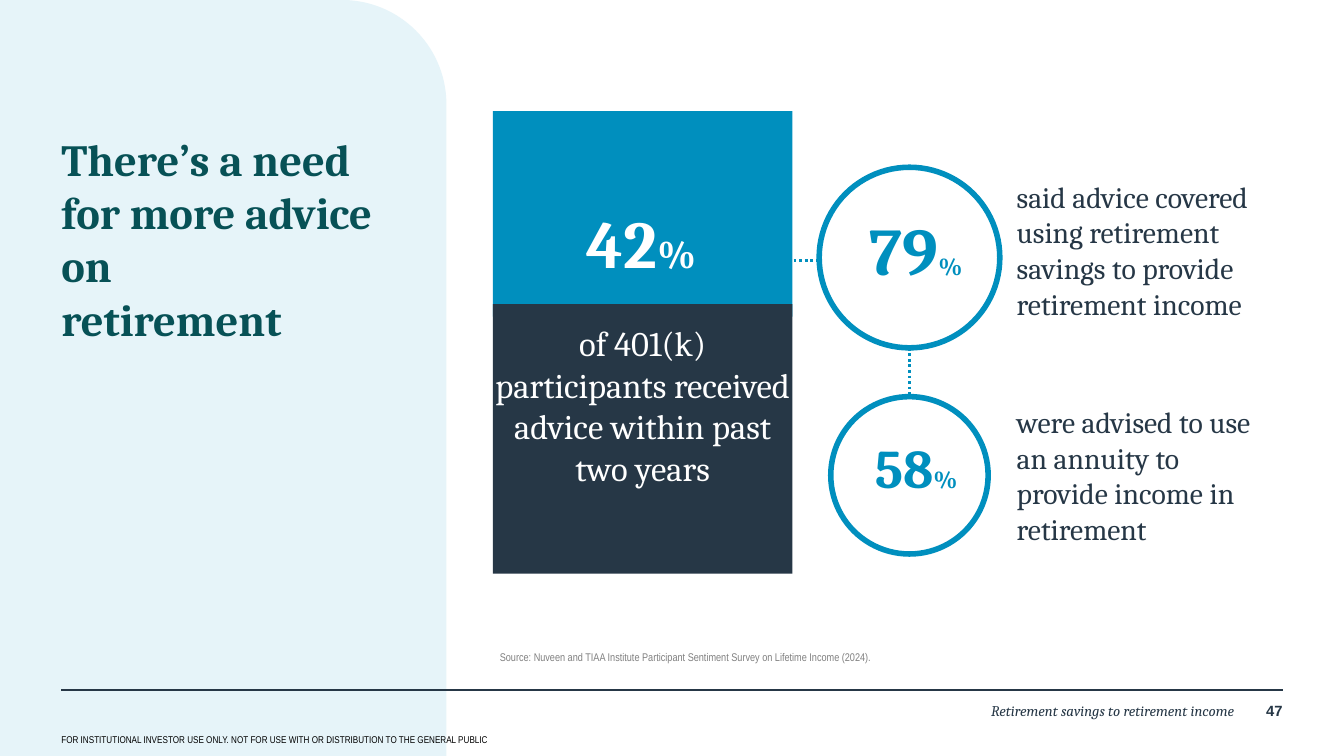
from lxml import etree
from pptx import Presentation
from pptx.dml.color import RGBColor
from pptx.enum.dml import MSO_LINE
from pptx.enum.shapes import MSO_CONNECTOR, MSO_SHAPE as SHAPE
from pptx.enum.text import MSO_ANCHOR as ANCHOR, PP_ALIGN as ALIGN
from pptx.oxml.ns import qn
from pptx.util import Pt

WIDTH, HEIGHT = 1087.92, 612
MARGIN = 49.7
BLUE, NAVY, TEAL, PALE, WHITE = "008FBE", "263746", "075156", "E6F4F9", "FFFFFF"
SERIF, SANS, NARROW = "Cambria", "Arial", "Arial Narrow"


def color(value):
    """Turn a hex string into a colour."""
    return RGBColor.from_string(value)


def add_block(slide, preset, box, fill, outline=None):
    """Add a filled shape, outlined if a colour is given."""
    block = slide.shapes.add_shape(preset, *map(Pt, box))
    block.shadow.inherit = False
    block.fill.solid()
    block.fill.fore_color.rgb = color(fill)
    if outline:
        block.line.color.rgb = color(outline)
        block.line.width = Pt(4.5)
    else:
        block.line.fill.background()
    return block


def add_rule(slide, start, end, ink, weight, dash=None):
    """Add a straight line between two points."""
    rule = slide.shapes.add_connector(MSO_CONNECTOR.STRAIGHT, *map(Pt, (*start, *end)))
    rule.line.color.rgb = color(ink)
    rule.line.width = Pt(weight)
    if dash:
        rule.line.dash_style = dash
    etree.SubElement(rule._element.spPr, qn("a:effectLst"))


def add_words(slide, box, words, size, ink, face=SERIF, align=ALIGN.LEFT,
              bold=False, italic=False, anchor=ANCHOR.TOP):
    """Add a wrapped paragraph without insets and return it."""
    frame = slide.shapes.add_textbox(*map(Pt, box)).text_frame
    frame.word_wrap = True
    frame.vertical_anchor = anchor
    frame.margin_left = frame.margin_right = frame.margin_top = frame.margin_bottom = 0
    frame.text = words
    paragraph = frame.paragraphs[0]
    paragraph.alignment = align
    font = paragraph.font
    font.name, font.size, font.bold, font.italic = face, Pt(size), bold, italic
    font.color.rgb = color(ink)
    return paragraph


def add_percentage(slide, box, number, size, sign_size, ink):
    """Add a bold centred number with a smaller percent sign."""
    figure = add_words(slide, box, number, size, ink, align=ALIGN.CENTER, bold=True)
    sign = figure.add_run()
    sign.text = "%"
    sign.font.size = Pt(sign_size)


def add_frame(slide, box):
    """Add the side panel, the footer rule and the footer texts."""
    left, top, width, height = box
    right = left + width - MARGIN
    footer = top + height - 44
    add_words(slide, (right - 28.8, footer, 28.8, 24), "47", 12, NAVY, SANS,
              ALIGN.RIGHT, bold=True)
    add_words(slide, (right - 655, footer, 616, 29), "Retirement savings to retirement income",
              12, NAVY, align=ALIGN.RIGHT, italic=True)
    panel = add_block(slide, SHAPE.ROUND_1_RECTANGLE, (left, top, 361.4, height), PALE)
    panel.adjustments[0] = 0.234
    add_rule(slide, (left + MARGIN, footer - 9.3), (right, footer - 9.3), NAVY, 2)
    add_words(slide, (left + MARGIN, footer + 26, 781, 10),
              "FOR INSTITUTIONAL INVESTOR USE ONLY. NOT FOR USE WITH OR DISTRIBUTION TO THE GENERAL PUBLIC",
              8, "000000", NARROW)


def add_headline(slide, box):
    """Add the slide title."""
    add_words(slide, box, "There’s a need for more advice on\vretirement", 36, TEAL, bold=True)


def add_survey_panel(slide, box):
    """Add the two-tone panel with the main survey result."""
    left, top, width, height = box
    split = top + 156.2
    add_block(slide, SHAPE.RECTANGLE, (left, top, width, 166.3), BLUE)
    add_percentage(slide, (left + 7.2, top + 73.4, 226, 66), "42", 54, 32, WHITE)
    add_block(slide, SHAPE.RECTANGLE, (left, split, width, top + height - split), NAVY)
    add_words(slide, (left, split + 14.4, width, 170),
              "of 401(k) participants received advice within past two years",
              28, WHITE, align=ALIGN.CENTER)


def add_finding(slide, box, number, size, statement, statement_top):
    """Add a ringed percentage with its statement to the right."""
    left, top, width, height = box
    middle, line_height = top + height / 2, size * 1.2
    add_block(slide, SHAPE.OVAL, box, WHITE, BLUE)
    add_percentage(slide, (left + width / 2 - 76.5, middle - 7 - line_height / 2, 164, line_height),
                   number, size, 20, BLUE)
    add_words(slide, (823, statement_top, 200, 116.6), statement, 24, NAVY)


def add_findings(slide, box):
    """Add both ringed findings and the dotted lines that join them."""
    left, top, width, height = box
    center = left + 73.1
    large, small = 146.2, 127.4
    small_top = top + height - small
    add_rule(slide, (center, top + large), (center, small_top), BLUE, 2.25, MSO_LINE.ROUND_DOT)
    add_finding(slide, (center - large / 2, top, large, large), "79", 54,
                "said advice covered using retirement savings to provide retirement income",
                top + 9.3)
    add_finding(slide, (center - small / 2, small_top, small, small), "58", 44,
                "were advised to use an annuity to provide income in retirement",
                small_top + 5.8)
    add_rule(slide, (left - 43, top + 75.6), (left, top + 75.6), BLUE, 2.25, MSO_LINE.ROUND_DOT)


def add_source(slide, box):
    """Add the source note."""
    add_words(slide, box,
              "Source: Nuveen and TIAA Institute Participant Sentiment Survey on Lifetime Income (2024).",
              9, "808080", NARROW, anchor=ANCHOR.BOTTOM)


def main():
    """Build and save the slide."""
    deck = Presentation()
    deck.slide_width, deck.slide_height = Pt(WIDTH), Pt(HEIGHT)
    slide = deck.slides.add_slide(deck.slide_layouts[6])
    add_frame(slide, (0, 0, WIDTH, HEIGHT))
    add_headline(slide, (MARGIN, 106.6, 277.2, 174.2))
    add_source(slide, (404.6, 507.6, 634, 29.5))
    add_survey_panel(slide, (398.9, 90, 242.6, 374.4))
    add_findings(slide, (663.1, 135.4, 376, 313.1))
    deck.save("out.pptx")


if __name__ == "__main__":
    main()
